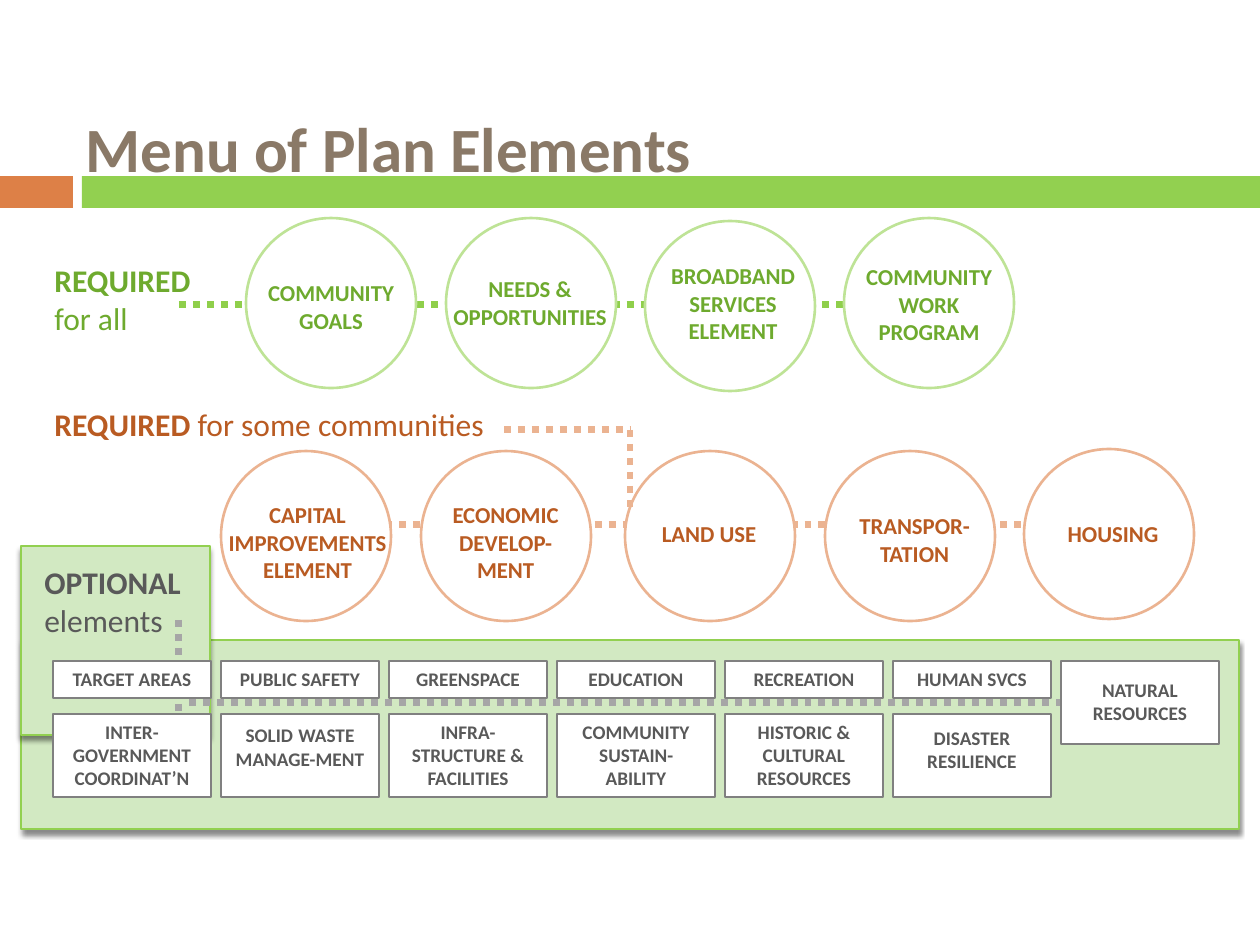
from dataclasses import dataclass

from lxml.etree import SubElement
from pptx import Presentation
from pptx.dml.color import RGBColor
from pptx.enum.dml import MSO_LINE
from pptx.enum.shapes import MSO_CONNECTOR, MSO_SHAPE
from pptx.enum.text import MSO_ANCHOR, MSO_AUTO_SIZE, PP_ALIGN
from pptx.oxml.ns import qn
from pptx.util import Emu, Pt

SCALE = 914400 / 126


@dataclass(frozen=True)
class Theme:
    """Colours, type sizes and line widths of the slide."""
    font: str = "Calibri"
    title: str = "8A7967"
    accent: str = "DD8047"
    bar: str = "92D050"
    panel: str = "D2E9C2"
    white: str = "FFFFFF"
    green: str = "6EAA2E"
    green_ring: str = "BEE396"
    green_dots: str = "8FCF4B"
    orange: str = "B95B22"
    orange_ring: str = "EBB391"
    gray: str = "595959"
    gray_dots: str = "A6A6A6"
    card_line: str = "808080"
    title_size: float = 36
    heading_size: float = 18
    circle_size: float = 13
    card_size: float = 11
    panel_width: float = 0.79
    card_width: float = 0.75
    ring_width: float = 1.5
    dots_width: float = 4


@dataclass(frozen=True)
class Box:
    """A rectangle in px."""
    left: int
    top: int
    width: int
    height: int

    def inner(self, left, top, width, height):
        """Return a box placed relative to this one."""
        return Box(self.left + left, self.top + top, width, height)

    def emu(self):
        """Return the four lengths in EMU."""
        return [px(n) for n in (self.left, self.top, self.width, self.height)]


THEME = Theme()


def px(length):
    """Turn px into EMU."""
    return Emu(round(length * SCALE))


def rgb(value):
    """Turn a hex string into a colour."""
    return RGBColor.from_string(value)


def write(frame, paras, size, color, align=PP_ALIGN.LEFT):
    """Fill a text frame; each paragraph is a list of (text, bold, size) runs or a bold string."""
    frame.word_wrap = True
    for index, runs in enumerate(paras):
        para = frame.paragraphs[0] if index == 0 else frame.add_paragraph()
        para.alignment = align
        for text, bold, run_size in [(runs, True, size)] if isinstance(runs, str) else runs:
            span = para.add_run()
            span.text = text
            font = span.font
            font.name, font.size, font.bold = THEME.font, Pt(run_size), bold
            font.color.rgb = rgb(color)


def add_text(page, box, paras, size, color, align=PP_ALIGN.LEFT):
    """Add a growing text box."""
    frame = page.shapes.add_textbox(*box.emu()).text_frame
    frame.auto_size = MSO_AUTO_SIZE.SHAPE_TO_FIT_TEXT
    write(frame, paras, size, color, align)


def add_shape(page, kind, box, fill, line=None, width=0):
    """Add a plain filled shape."""
    shape = page.shapes.add_shape(kind, *box.emu())
    shape.shadow.inherit = False
    shape.fill.solid()
    shape.fill.fore_color.rgb = rgb(fill)
    if line:
        shape.line.color.rgb = rgb(line)
        shape.line.width = Pt(width)
    else:
        shape.line.fill.background()
    return shape


def add_dots(page, box, color):
    """Add a dotted line from the top left to the bottom right of a box."""
    left, top, width, height = box.emu()
    line = page.shapes.add_connector(MSO_CONNECTOR.STRAIGHT, left, top, left + width, top + height)
    line.line.color.rgb = rgb(color)
    line.line.width = Pt(THEME.dots_width)
    line.line.dash_style = MSO_LINE.ROUND_DOT
    SubElement(line._element.spPr, qn("a:effectLst"))


def add_panel(page, box):
    """Add a green panel with a soft shadow below it."""
    panel = add_shape(page, MSO_SHAPE.RECTANGLE, box, THEME.panel, THEME.bar, THEME.panel_width)
    effects = panel._element.spPr.find(qn("a:effectLst"))
    shadow = SubElement(effects, qn("a:outerShdw"), blurRad=str(Pt(3)), dist=str(Pt(2.4)),
                        dir="5400000", rotWithShape="0")
    tint = SubElement(shadow, qn("a:srgbClr"), val="000000")
    SubElement(tint, qn("a:alpha"), val="45000")


def add_header(page, box):
    """Place the title and the two bars under it."""
    for left, width, color in [(0, 73, THEME.accent), (82, 1178, THEME.bar)]:
        add_shape(page, MSO_SHAPE.RECTANGLE, box.inner(left, 92, width, 32), color)
    title = page.shapes.title
    title.left, title.top, title.width, title.height = box.inner(73, 0, 1081, 126).emu()
    frame = title.text_frame
    frame.auto_size = MSO_AUTO_SIZE.NONE
    frame.vertical_anchor = MSO_ANCHOR.MIDDLE
    write(frame, ["Menu of Plan Elements"], THEME.title_size, THEME.title)


def add_circles(page, box, circles, ring, color):
    """Place a row of labelled circles, each given as circle and label offsets."""
    for (left, top), (label_left, label_top, label_width), paras in circles:
        add_shape(page, MSO_SHAPE.OVAL, box.inner(left, top, 170, 170),
                  THEME.white, ring, THEME.ring_width)
        add_text(page, box.inner(label_left, label_top, label_width, 68), paras,
                 THEME.circle_size, color, PP_ALIGN.CENTER)


def add_required_for_all(page, box):
    """Place the green row of elements."""
    size = THEME.heading_size
    add_text(page, box.inner(0, 37, 189, 89), ["REQUIRED", [("for all", False, size)]],
             size, THEME.green)
    add_dots(page, box.inner(137, 87, 713, 0), THEME.green_dots)
    add_circles(page, box, [
        ((204, 0), (200, 55, 178), ["COMMUNITY", "GOALS"]),
        ((404, 0), (389, 51, 198), ["NEEDS &", "OPPORTUNITIES"]),
        ((603, 3), (602, 38, 178), ["BROADBAND SERVICES ELEMENT"]),
        ((802, 0), (798, 39, 178), ["COMMUNITY", "WORK PROGRAM"]),
    ], THEME.green_ring, THEME.green)


def add_required_for_some(page, box):
    """Place the orange row of elements."""
    size = THEME.heading_size
    add_dots(page, box.inner(189, 126, 932, 0), THEME.orange_ring)
    add_text(page, box.inner(0, 0, 766, 50),
             [[("REQUIRED ", True, size), ("for some communities", False, size)]],
             size, THEME.orange)
    add_circles(page, box, [
        ((179, 52), (168, 96, 195), ["CAPITAL IMPROVEMENTS ELEMENT"]),
        ((379, 52), (384, 96, 159), ["ECONOMIC DEVELOP-MENT"]),
        ((583, 52), (588, 115, 158), ["LAND USE"]),
        ((783, 52), (793, 107, 159), ["TRANSPOR-", "TATION"]),
        ((982, 50), (987, 115, 168), ["HOUSING"]),
    ], THEME.orange_ring, THEME.orange)
    add_dots(page, box.inner(462, 31, 126, 0), THEME.orange_ring)
    add_dots(page, box.inner(588, 31, 0, 83), THEME.orange_ring)


def add_card(page, box, paras, inset=6):
    """Add a white card whose text starts at the inset."""
    card = add_shape(page, MSO_SHAPE.RECTANGLE, box, THEME.white,
                     THEME.card_line, THEME.card_width)
    frame = card.text_frame
    frame.vertical_anchor = MSO_ANCHOR.TOP
    frame.margin_top = px(inset)
    write(frame, paras, THEME.card_size, THEME.gray, PP_ALIGN.CENTER)


def add_optional(page, box):
    """Place the tabbed panel with its grid of cards."""
    size, small = THEME.heading_size, THEME.card_size
    add_panel(page, box.inner(0, 94, 1218, 189))
    add_panel(page, box.inner(0, 0, 189, 189))
    add_dots(page, box.inner(158, 74, 0, 126), THEME.gray_dots)
    add_dots(page, box.inner(168, 157, 882, 0), THEME.gray_dots)
    upper = ["TARGET AREAS", "PUBLIC SAFETY", "GREENSPACE", "EDUCATION", "RECREATION",
             "HUMAN SVCS"]
    lower = [
        ["INTER-GOVERNMENT", "COORDINAT’N"],
        [[("SOLID", True, small), (" ", True, THEME.circle_size), ("WASTE", True, small)],
         "MANAGE-MENT"],
        ["INFRA-STRUCTURE & FACILITIES"],
        ["COMMUNITY", "SUSTAIN-ABILITY"],
        ["HISTORIC & CULTURAL RESOURCES"],
        ["DISASTER RESILIENCE"],
    ]
    for column, (name, paras) in enumerate(zip(upper, lower)):
        left = 32 + 168 * column
        add_card(page, box.inner(left, 115, 158, 37), [name])
        add_card(page, box.inner(left, 168, 158, 83), paras, 12 if column == 5 else 6)
    add_card(page, box.inner(32 + 168 * 6, 115, 158, 83), ["NATURAL RESOURCES"], 17)
    add_text(page, box.inner(11, 11, 252, 89), ["OPTIONAL", [("elements", False, size)]],
             size, THEME.gray)


def main():
    """Build the deck and save it."""
    deck = Presentation()
    deck.slide_width, deck.slide_height = px(1260), px(945)
    page = deck.slides.add_slide(deck.slide_layouts[5])
    add_header(page, Box(0, 84, 1260, 126))
    add_required_for_some(page, Box(42, 399, 1153, 222))
    add_optional(page, Box(21, 546, 1218, 283))
    add_required_for_all(page, Box(42, 218, 973, 173))
    deck.save("out.pptx")


if __name__ == "__main__":
    main()
